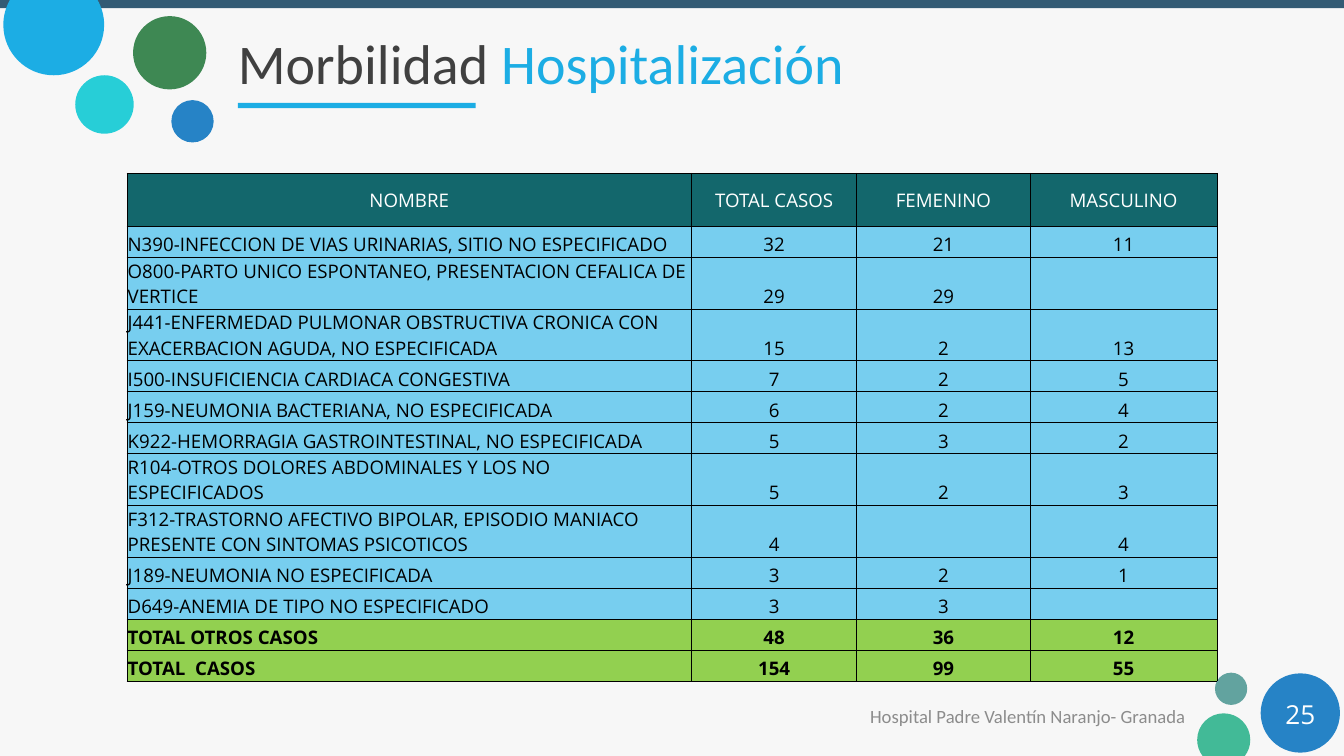
from dataclasses import dataclass, replace
from math import asin, cos, pi, sin, tan

from lxml.etree import SubElement
from pptx import Presentation
from pptx.dml.color import RGBColor as RGB
from pptx.enum.shapes import MSO_SHAPE as Kind
from pptx.enum.text import MSO_ANCHOR as Anchor, PP_ALIGN as Align
from pptx.oxml.ns import qn
from pptx.util import Emu, Inches, Pt

CELL = Inches(0.1)
COLS, ROWS = 200, 112.5


@dataclass(frozen=True)
class Theme:
    back: str = "F7F7F7"
    bar: str = "335B74"
    sky: str = "1CADE4"
    blue: str = "2683C6"
    aqua: str = "27CED7"
    green: str = "3E8853"
    sage: str = "62A39F"
    mint: str = "42BA97"
    head: str = "13676C"
    body: str = "77CEEF"
    total: str = "92D050"
    dark: str = "404040"
    gray: str = "8C8C8C"
    black: str = "000000"
    white: str = "FFFFFF"
    title: int = 60
    page: int = 28
    text: int = 20
    main: str = "Calibri"
    data: str = "Open Sans"


@dataclass(frozen=True)
class Box:
    x: float
    y: float
    w: float
    h: float

    def emu(self) -> list[Emu]:
        return [grid(v) for v in (self.x, self.y, self.w, self.h)]


@dataclass(frozen=True)
class Part:
    kind: Kind
    box: Box
    fill: str


@dataclass(frozen=True)
class Disc:
    x: float
    y: float
    r: float
    edge: float
    fill: str


@dataclass(frozen=True)
class Run:
    text: str
    color: str


@dataclass(frozen=True)
class Label:
    box: Box
    runs: list[Run]
    size: int
    face: str
    align: Align


@dataclass(frozen=True)
class Look:
    fill: str
    ink: str
    anchor: Anchor
    first: Align
    tall: float = 4.61
    bold: bool = False


T = Theme()
HEAD = Look(T.head, T.white, Anchor.MIDDLE, Align.CENTER, 7.9)
BODY = Look(T.body, T.black, Anchor.BOTTOM, Align.LEFT)
PAIR = replace(BODY, tall=7.7)
TOTAL = replace(BODY, fill=T.total, bold=True)

PARTS = [
    Part(Kind.RECTANGLE, Box(0, 0, COLS, 1.2), T.bar),
    Part(Kind.OVAL, Box(25.5, 14.9, 6.3, 6.3), T.blue),
    Part(Kind.OVAL, Box(11.2, 11.2, 8.7, 8.7), T.aqua),
    Part(Kind.OVAL, Box(19.8, 2.4, 10.9, 10.9), T.green),
    Part(Kind.OVAL, Box(180.8, 100.1, 4.8, 4.8), T.sage),
    Part(Kind.OVAL, Box(187.6, 100.2, 11.8, 11.8), T.blue),
    Part(Kind.RECTANGLE, Box(35.4, 15.3, 35.4, 0.8), T.sky),
]
DISCS = [Disc(8, 3.7, 7.5, 0, T.sky), Disc(182.1, 110.1, 3.95, ROWS, T.mint)]
LABELS = [
    Label(Box(33.6, 2.7, 156.9, 13.2),
          [Run("Morbilidad ", T.dark), Run("Hospitalización", T.sky)],
          T.title, T.main, Align.LEFT),
    Label(Box(114.9, 103.5, 63.3, 6),
          [Run("Hospital Padre Valentín Naranjo- Granada", T.gray)],
          T.text, T.main, Align.RIGHT),
    Label(Box(187.6, 103.2, 11.8, 6), [Run("25", T.white)],
          T.page, T.data, Align.CENTER),
]
WIDTHS = [84, 24.6, 25.8, 27.8]
DATA = [
    (HEAD, "NOMBRE", "TOTAL CASOS", "FEMENINO", "MASCULINO"),
    (BODY, "N390-INFECCION DE VIAS URINARIAS, SITIO NO ESPECIFICADO", "32", "21", "11"),
    (PAIR, "O800-PARTO UNICO ESPONTANEO, PRESENTACION CEFALICA DE VERTICE", "29", "29", ""),
    (PAIR, "J441-ENFERMEDAD PULMONAR OBSTRUCTIVA CRONICA CON EXACERBACION AGUDA, NO ESPECIFICADA",
     "15", "2", "13"),
    (BODY, "I500-INSUFICIENCIA CARDIACA CONGESTIVA", "7", "2", "5"),
    (BODY, "J159-NEUMONIA BACTERIANA, NO ESPECIFICADA", "6", "2", "4"),
    (BODY, "K922-HEMORRAGIA GASTROINTESTINAL, NO ESPECIFICADA", "5", "3", "2"),
    (PAIR, "R104-OTROS DOLORES ABDOMINALES Y LOS NO ESPECIFICADOS", "5", "2", "3"),
    (PAIR, "F312-TRASTORNO AFECTIVO BIPOLAR, EPISODIO MANIACO PRESENTE CON SINTOMAS PSICOTICOS",
     "4", "", "4"),
    (BODY, "J189-NEUMONIA NO ESPECIFICADA", "3", "2", "1"),
    (BODY, "D649-ANEMIA DE TIPO NO ESPECIFICADO", "3", "3", ""),
    (TOTAL, "TOTAL OTROS CASOS", "48", "36", "12"),
    (TOTAL, "TOTAL  CASOS", "154", "99", "55"),
]


def grid(n: float) -> Emu:
    return Emu(round(n * CELL))


def paint(shape, fill: str) -> None:
    shape.shadow.inherit = False
    shape.fill.solid()
    shape.fill.fore_color.rgb = RGB.from_string(fill)
    shape.line.fill.background()


def add_part(slide, part: Part) -> None:
    paint(slide.shapes.add_shape(part.kind, *part.box.emu()), part.fill)


def add_disc(slide, disc: Disc) -> None:
    def spot(turn: float, bend: float = 0) -> tuple[Emu, Emu]:
        return (grid(disc.x + disc.r * (cos(turn) - bend * sin(turn))),
                grid(disc.y + disc.r * (sin(turn) + bend * cos(turn))))

    cut = asin((disc.edge - disc.y) / disc.r)
    half = pi if cut < 0 else -pi
    turns = [cut, 0, half / 2, half, half - cut]
    pen = slide.shapes.build_freeform(*spot(cut))
    pen.add_line_segments([spot(t) for t in turns[1:]], close=True)
    shape = pen.convert_to_shape()
    lines = list(shape._element.iter(qn("a:lnTo")))
    for line, a, b in zip(lines, turns, turns[1:]):
        bend = 4 / 3 * tan((b - a) / 4)
        curve = line.makeelement(qn("a:cubicBezTo"), {})
        for x, y in (spot(a, bend), spot(b, -bend), spot(b)):
            SubElement(curve, qn("a:pt"), x=str(x - shape.left), y=str(y - shape.top))
        line.getparent().replace(line, curve)
    paint(shape, disc.fill)


def add_label(slide, label: Label) -> None:
    frame = slide.shapes.add_textbox(*label.box.emu()).text_frame
    frame.word_wrap = True
    frame.vertical_anchor = Anchor.MIDDLE
    frame.margin_left = frame.margin_right = Inches(0.18)
    frame.margin_top = frame.margin_bottom = Inches(0.09)
    para = frame.paragraphs[0]
    para.alignment = label.align
    for item in label.runs:
        run = para.add_run()
        run.text = item.text
        run.font.size = Pt(label.size)
        run.font.name = label.face
        run.font.color.rgb = RGB.from_string(item.color)


def add_edges(cell) -> None:
    props = cell._tc.get_or_add_tcPr()
    for i, side in enumerate(("lnL", "lnR", "lnT", "lnB")):
        edge = props.makeelement(qn(f"a:{side}"), {"w": str(Pt(1))})
        fill = SubElement(edge, qn("a:solidFill"))
        SubElement(fill, qn("a:srgbClr"), val=T.black)
        props.insert(i, edge)


def fill_cell(cell, text: str, look: Look, align: Align) -> None:
    cell.fill.solid()
    cell.fill.fore_color.rgb = RGB.from_string(look.fill)
    cell.vertical_anchor = look.anchor
    cell.margin_left = cell.margin_right = cell.margin_top = Inches(0.01)
    cell.margin_bottom = 0
    cell.text_frame.text = text
    para = cell.text_frame.paragraphs[0]
    para.alignment = align
    for run in para.runs:
        run.font.size = Pt(T.text)
        run.font.name = T.data
        run.font.bold = look.bold
        run.font.color.rgb = RGB.from_string(look.ink)
    add_edges(cell)


def add_cases(slide) -> None:
    box = Box(18.9, 25.8, sum(WIDTHS), sum(look.tall for look, *_ in DATA))
    table = slide.shapes.add_table(len(DATA), len(WIDTHS), *box.emu()).table
    table.first_row = table.horz_banding = False
    for col, width in zip(table.columns, WIDTHS):
        col.width = grid(width)
    for r, (look, *texts) in enumerate(DATA):
        table.rows[r].height = grid(look.tall)
        for c, text in enumerate(texts):
            fill_cell(table.cell(r, c), text, look, Align.CENTER if c else look.first)


def main() -> None:
    deck = Presentation()
    deck.slide_width, deck.slide_height = grid(COLS), grid(ROWS)
    slide = deck.slides.add_slide(deck.slide_layouts[6])
    slide.background.fill.solid()
    slide.background.fill.fore_color.rgb = RGB.from_string(T.back)
    for part in PARTS:
        add_part(slide, part)
    for disc in DISCS:
        add_disc(slide, disc)
    for label in LABELS:
        add_label(slide, label)
    add_cases(slide)
    deck.save("out.pptx")


if __name__ == "__main__":
    main()
